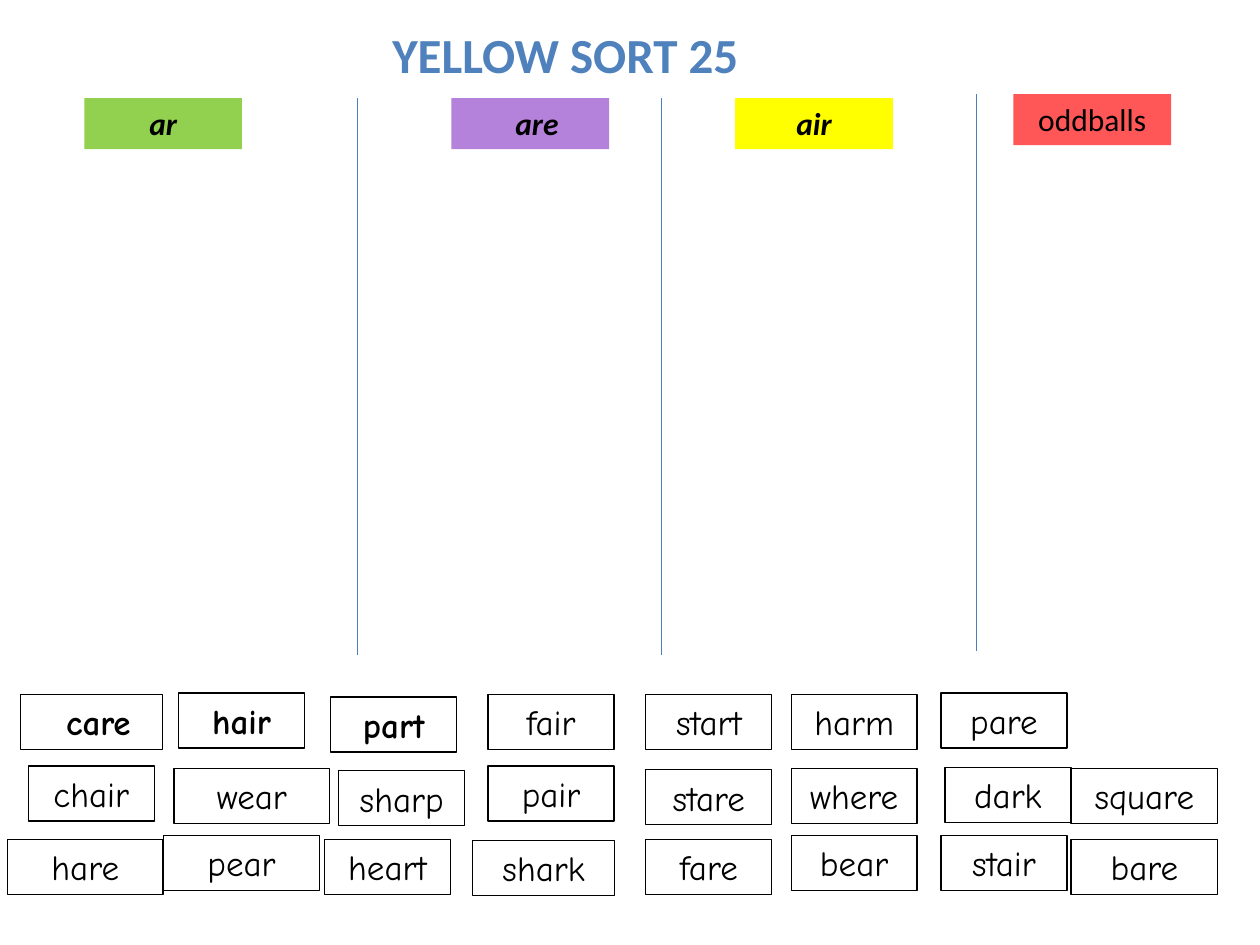
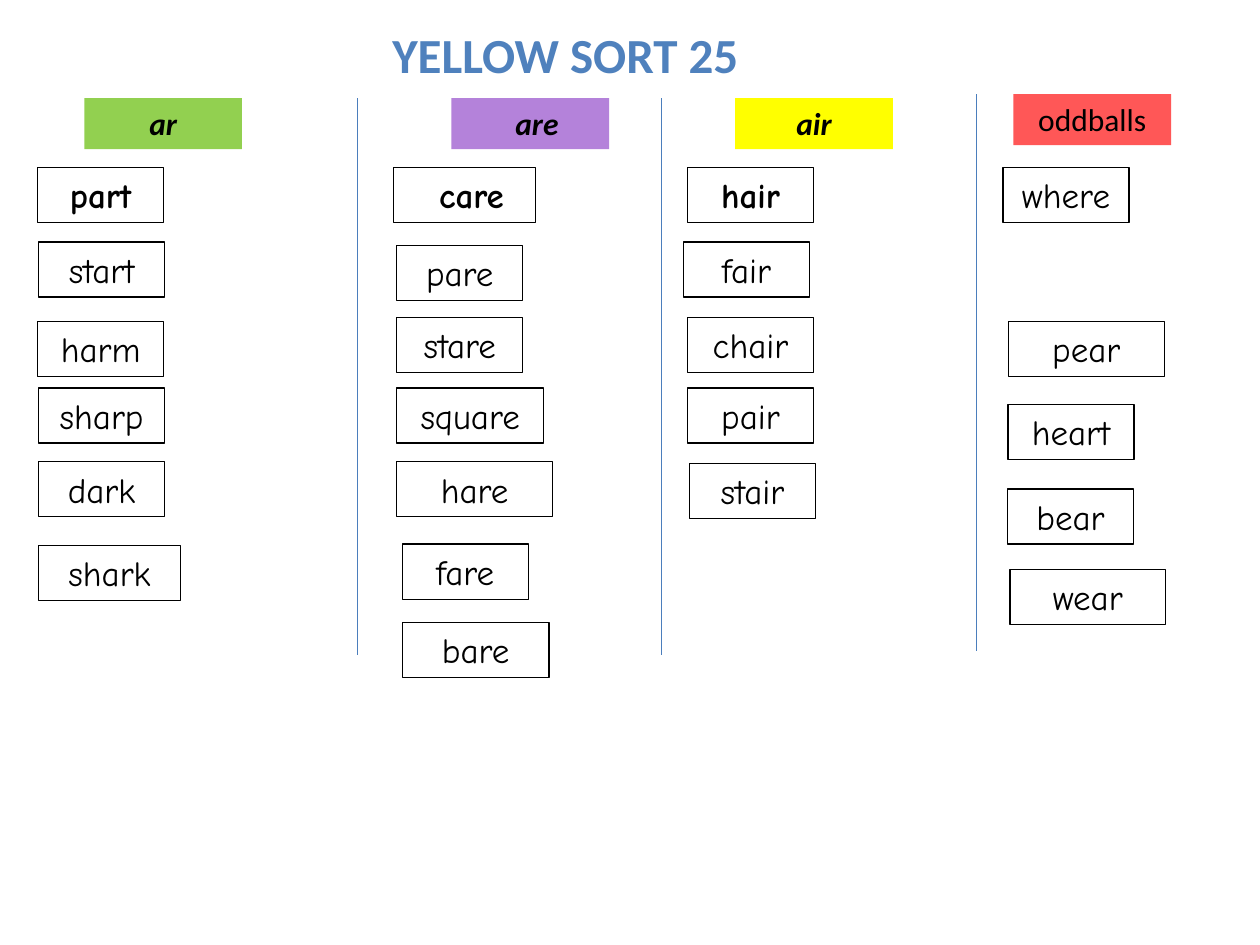
from lxml import etree
from pptx import Presentation
from pptx.dml.color import RGBColor
from pptx.enum.shapes import MSO_CONNECTOR, MSO_SHAPE
from pptx.enum.text import MSO_ANCHOR, MSO_AUTO_SIZE, PP_ALIGN
from pptx.oxml.ns import qn
from pptx.util import Cm, Pt

RECTANGLE = MSO_SHAPE.RECTANGLE
STRAIGHT = MSO_CONNECTOR.STRAIGHT
TOP = MSO_ANCHOR.TOP
CENTER = PP_ALIGN.CENTER
FIT_TEXT = MSO_AUTO_SIZE.SHAPE_TO_FIT_TEXT
TITLE_ONLY = 5

BLACK = RGBColor(0x00, 0x00, 0x00)
TITLE_BLUE = RGBColor(0x4F, 0x81, 0xBD)
LINE_BLUE = RGBColor(0x4B, 0x7E, 0xBC)
GREEN = RGBColor(0x92, 0xD0, 0x50)
PURPLE = RGBColor(0xB4, 0x82, 0xDA)
YELLOW = RGBColor(0xFF, 0xFF, 0x00)
RED = RGBColor(0xFF, 0x57, 0x57)

HEADING_FONT = "Calibri"
CARD_FONT = "Comic Neue"
INSET = 0.25
NUDGE = 0.27  # extra left inset for the labels set right of centre

# Column headings: text, left, top, fill, bold italic
HEADINGS = [
    ("ar", 1.7, 1.98, GREEN, True),
    ("are", 9.1, 1.98, PURPLE, True),
    ("air", 14.82, 1.98, YELLOW, True),
    ("oddballs", 20.43, 1.9, RED, False),
]

# Column dividers: x, top
DIVIDERS = [(7.2, 1.98), (13.34, 1.98), (19.69, 1.9)]
DIVIDER_LENGTH = 11.23

# Word cards
CARD_WIDTH, CARD_HEIGHT = 2.54, 1.11
WIDE_CARDS = {"care": 2.86, "shark": 2.86, "square": 2.96, "bare": 2.96,
              "wear": 3.14, "pear": 3.14, "hare": 3.14}
KEY_WORDS = {"care", "hair", "part"}
NUDGED = {"are", "care"}

# Cards still to be sorted, row by row: word, left, top
UNSORTED = [
    ("care", 0.42, 14), ("hair", 3.6, 13.97), ("part", 6.67, 14.05), ("fair", 9.84, 14),
    ("start", 13.02, 14), ("harm", 15.95, 14), ("pare", 18.97, 13.97),
    ("chair", 0.57, 15.44), ("wear", 3.51, 15.49), ("sharp", 6.83, 15.54),
    ("pair", 9.84, 15.44), ("stare", 13.02, 15.52), ("where", 15.95, 15.49),
    ("dark", 19.05, 15.47), ("square", 21.59, 15.49),
    ("hare", 0.15, 16.92), ("pear", 3.3, 16.84), ("heart", 6.54, 16.92),
    ("shark", 9.53, 16.94), ("fare", 13.02, 16.92), ("bear", 15.95, 16.84),
    ("stair", 18.97, 16.84), ("bare", 21.59, 16.92),
]

# Cards placed under their heading, column by column: word, left, top
SORTED = [
    ("part", 0.76, 3.38), ("start", 0.78, 4.88), ("harm", 0.76, 6.48),
    ("sharp", 0.78, 7.82), ("dark", 0.78, 9.31), ("shark", 0.78, 11),
    ("care", 7.94, 3.38), ("pare", 8, 4.95), ("stare", 8, 6.4), ("square", 8, 7.82),
    ("hare", 8, 9.31), ("fare", 8.11, 10.97), ("bare", 8.11, 12.55),
    ("hair", 13.86, 3.38), ("fair", 13.78, 4.88), ("chair", 13.86, 6.4),
    ("pair", 13.86, 7.82), ("stair", 13.9, 9.34),
    ("where", 20.22, 3.38), ("pear", 20.33, 6.48), ("heart", 20.32, 8.16),
    ("bear", 20.31, 9.86), ("wear", 20.36, 11.48),
]


def write_text(shape, text, font, size, color=BLACK, bold=False, italic=False):
    frame = shape.text_frame
    frame.word_wrap = True
    frame.auto_size = FIT_TEXT
    frame.vertical_anchor = TOP
    frame.margin_left = Cm(INSET + (NUDGE if text in NUDGED else 0))
    frame.margin_right = Cm(INSET)
    paragraph = frame.paragraphs[0]
    paragraph.alignment = CENTER
    run = paragraph.add_run()
    run.text = text
    run.font.name = font
    run.font.size = Pt(size)
    run.font.bold = bold
    run.font.italic = italic
    run.font.color.rgb = color


def add_box(slide, left, top, width, height):
    shape = slide.shapes.add_shape(RECTANGLE, Cm(left), Cm(top), Cm(width), Cm(height))
    shape.shadow.inherit = False
    return shape


presentation = Presentation()
presentation.slide_width = Cm(25.4)
presentation.slide_height = Cm(19.05)

for cards in (UNSORTED, SORTED):
    slide = presentation.slides.add_slide(presentation.slide_layouts[TITLE_ONLY])

    # Title
    title = slide.shapes.title
    title.left, title.top, title.width, title.height = Cm(5.54), Cm(0.36), Cm(11.71), Cm(1.45)
    write_text(title, "YELLOW SORT 25", HEADING_FONT, 28, TITLE_BLUE, bold=True)

    # Column headings
    for text, left, top, fill, emphasis in HEADINGS:
        heading = add_box(slide, left, top, 3.18, 1.03)
        heading.fill.solid()
        heading.fill.fore_color.rgb = fill
        heading.line.fill.background()
        write_text(heading, text, HEADING_FONT, 18, bold=emphasis, italic=emphasis)

    # Column dividers
    for x, top in DIVIDERS:
        divider = slide.shapes.add_connector(
            STRAIGHT, Cm(x), Cm(top), Cm(x), Cm(top + DIVIDER_LENGTH))
        divider.line.color.rgb = LINE_BLUE
        divider.line.width = Pt(0.75)
        etree.SubElement(divider._element.spPr, qn("a:effectLst"))

    # Word cards
    for word, left, top in cards:
        card = add_box(slide, left, top, WIDE_CARDS.get(word, CARD_WIDTH), CARD_HEIGHT)
        card.fill.background()
        card.line.color.rgb = BLACK
        card.line.width = Pt(0.75)
        write_text(card, word, CARD_FONT, 20, bold=word in KEY_WORDS)

presentation.save("out.pptx")
